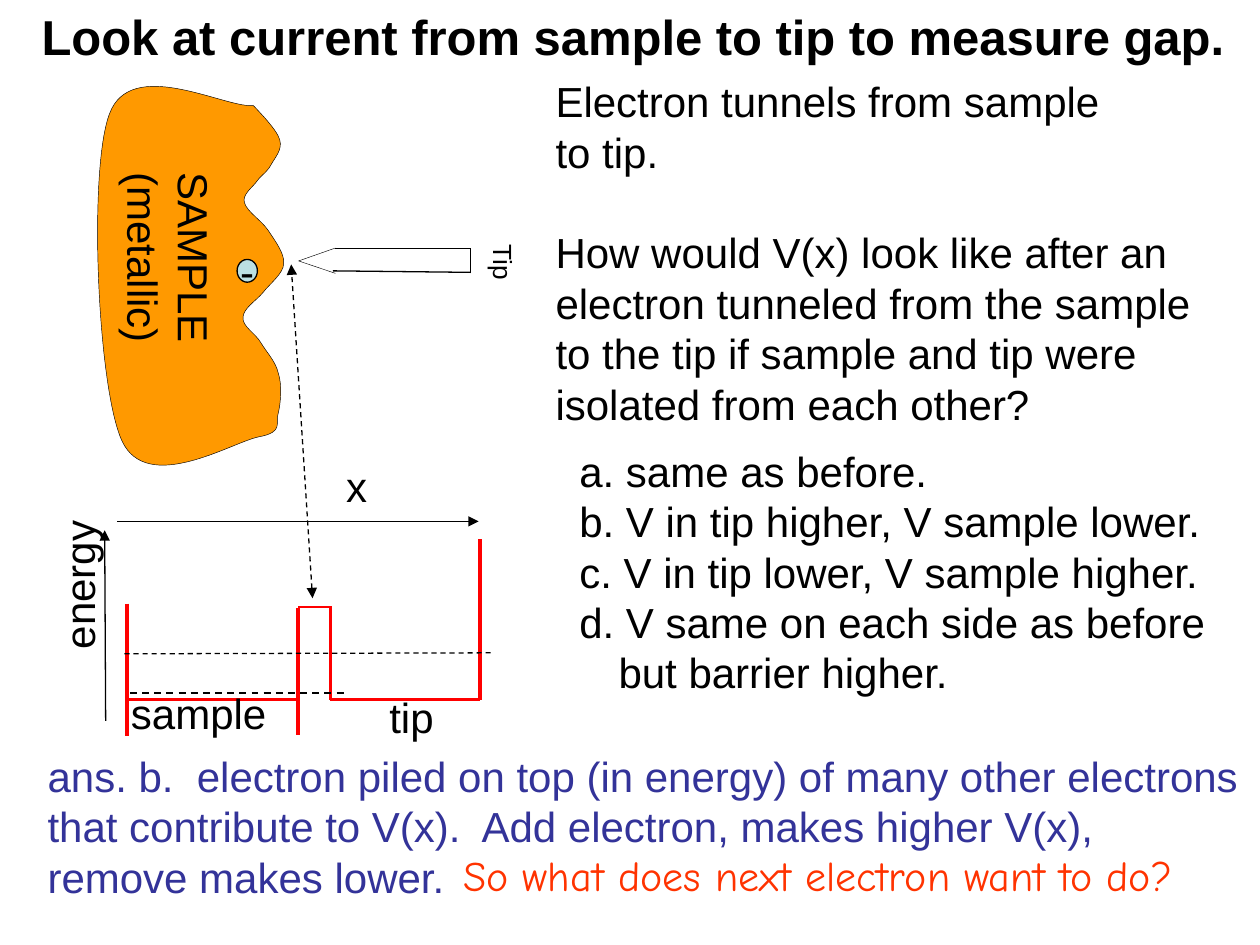
import itertools

import lxml.etree
import pptx
import pptx.dml.color
import pptx.enum.dml
import pptx.enum.shapes
import pptx.enum.text
import pptx.oxml.ns
import pptx.util

Cm, Pt = pptx.util.Cm, pptx.util.Pt
RGBColor = pptx.dml.color.RGBColor
qn = pptx.oxml.ns.qn

BLACK = RGBColor(0x00, 0x00, 0x00)
RED = RGBColor(0xFF, 0x00, 0x00)
METAL = RGBColor(0xFF, 0x99, 0x00)
ELECTRON = RGBColor(0xBB, 0xE0, 0xE3)
INDIGO = RGBColor(0x33, 0x33, 0x99)
ORANGE_RED = RGBColor(0xFF, 0x33, 0x00)

# Sample surface: a start point, then cubic segments of two controls and an end
SAMPLE_START = (3.31, 0.63)
SAMPLE_CURVES = [
    [(3.41, 0.74), (3.79, 1.12), (3.84, 1.32)],
    [(3.9, 1.52), (3.74, 1.68), (3.66, 1.83)],
    [(3.58, 1.98), (3.43, 2.06), (3.36, 2.18)],
    [(3.25, 2.31), (3.08, 2.44), (3.13, 2.59)],
    [(3.18, 2.77), (3.48, 2.95), (3.61, 3.15)],
    [(3.74, 3.35), (3.94, 3.61), (3.92, 3.81)],
    [(3.92, 4.01), (3.64, 4.22), (3.51, 4.39)],
    [(3.36, 4.57), (3.1, 4.72), (3.1, 4.9)],
    [(3.08, 5.08), (3.36, 5.23), (3.46, 5.41)],
    [(3.58, 5.61), (3.76, 5.79), (3.81, 6.02)],
    [(3.89, 6.25), (3.86, 6.63), (3.81, 6.83)],
    [(3.74, 7.03), (3.94, 7.21), (3.41, 7.31)],
    [(2.87, 7.42), (1.17, 8.48), (0.66, 7.39)],
    [(0.16, 6.3), (-0.02, 1.9), (0.41, 0.79)],
    [(0.84, -0.36), (2.7, 0.66), (3.28, 0.63)],
]


def add_line(slide, origin, start, end, color=BLACK, width=0.75,
             dashed=False, arrows=()):
    left, top = origin
    connector = slide.shapes.add_connector(
        pptx.enum.shapes.MSO_CONNECTOR.STRAIGHT,
        Cm(left + start[0]), Cm(top + start[1]),
        Cm(left + end[0]), Cm(top + end[1]))
    connector.line.color.rgb = color
    connector.line.width = Pt(width)
    if dashed:
        connector.line.dash_style = pptx.enum.dml.MSO_LINE.DASH
    properties = connector.element.spPr
    for arrow in arrows:
        lxml.etree.SubElement(properties.find(qn("a:ln")), qn(f"a:{arrow}"), type="triangle")
    lxml.etree.SubElement(properties, qn("a:effectLst"))


def style_text(frame, size=24, color=BLACK, font="Arial", bold=False):
    for paragraph in frame.paragraphs:
        for run in paragraph.runs:
            run.font.name = font
            run.font.size = Pt(size)
            run.font.bold = bold
            run.font.color.rgb = color


def add_text(slide, origin, box, text, rotation=0, inset=True, wrap=False, **style):
    left, top, width, height = box
    label = slide.shapes.add_textbox(
        Cm(origin[0] + left), Cm(origin[1] + top), Cm(width), Cm(height))
    label.rotation = rotation
    frame = label.text_frame
    frame.word_wrap = wrap
    frame.auto_size = pptx.enum.text.MSO_AUTO_SIZE.SHAPE_TO_FIT_TEXT
    if not inset:
        frame.margin_left = frame.margin_right = 0
        frame.margin_top = frame.margin_bottom = 0
    frame.text = text
    style_text(frame, **style)
    return frame


def style_shape(shape, fill, width):
    shape.shadow.inherit = False
    shape.fill.solid()
    shape.fill.fore_color.rgb = fill
    shape.line.color.rgb = BLACK
    shape.line.width = Pt(width)


def add_curved_outline(slide, origin, start, curves):
    left, top = origin
    outline = slide.shapes.build_freeform(Cm(left + start[0]), Cm(top + start[1]))
    outline.add_line_segments(
        [(Cm(left + x), Cm(top + y)) for x, y in itertools.chain.from_iterable(curves)])
    shape = outline.convert_to_shape()
    # Gather each three straight steps into one cubic curve
    steps = list(shape.element.iter(qn("a:lnTo")))
    for first, second, end in zip(steps[::3], steps[1::3], steps[2::3]):
        curve = lxml.etree.Element(qn("a:cubicBezTo"))
        first.addprevious(curve)
        for step in (first, second, end):
            curve.append(step[0])
            step.getparent().remove(step)
    return shape


def draw_microscope(slide, origin):
    left, top = origin
    # Tip
    tip_corners = [(7.67, 4.01), (7.67, 3.5), (4.96, 3.5), (4.22, 3.76), (4.96, 4.01)]
    for start, end in itertools.pairwise(tip_corners):
        add_line(slide, origin, start, end, width=0.25)
    add_line(slide, origin, (7.67, 3.99), (4.91, 3.96))
    add_text(slide, origin, (7.98, 3.48, 0.74, 0.64), "Tip", 90, inset=False, size=15)

    # Metallic sample
    sample = add_curved_outline(slide, origin, SAMPLE_START, SAMPLE_CURVES)
    style_shape(sample, METAL, 0.25)
    add_text(slide, origin, (-0.14, 2.69, 3.48, 2.06), "SAMPLE\n(metallic)", 90, inset=False)

    # Electron
    electron = slide.shapes.add_shape(
        pptx.enum.shapes.MSO_SHAPE.OVAL, Cm(left + 2.98), Cm(top + 3.73), Cm(0.41), Cm(0.46))
    style_shape(electron, ELECTRON, 0.75)
    frame = electron.text_frame
    frame.word_wrap = False
    frame.vertical_anchor = pptx.enum.text.MSO_ANCHOR.MIDDLE
    frame.text = "-"
    frame.paragraphs[0].alignment = pptx.enum.text.PP_ALIGN.CENTER
    style_text(frame)


def draw_potential(slide, origin):
    sample_left, gap_left, gap_right, tip_right = 0.56, 4.01, 4.66, 7.68
    floor, barrier = 5.1, 3.24

    # Axes
    add_line(slide, origin, (0.13, 5.53), (0.11, 1.69), arrows=["tailEnd"])
    add_text(slide, origin, (-1.97, 2.15, 3.1, 1.27), "energy", 270)
    add_line(slide, origin, (0.36, 1.51), (7.65, 1.51), arrows=["tailEnd"])
    add_text(slide, origin, (4.73, 0.16, 0.94, 1.27), "x")

    # Wells and barrier
    for start, end, level in [(sample_left, gap_left, floor),
                              (gap_left, gap_right, barrier),
                              (gap_right, tip_right, floor)]:
        add_line(slide, origin, (start, level), (end, level), RED, 1.5)
    for x, top, bottom, width in [(sample_left, 3.17, 5.83, 2.25),
                                  (gap_left, 3.26, 5.81, 2.25),
                                  (gap_right, 3.22, 5.12, 1.5),
                                  (tip_right, 1.87, 5.12, 2.25)]:
        add_line(slide, origin, (x, top), (x, bottom), RED, width)

    # Energy levels
    add_line(slide, origin, (0.51, 4.18), (7.93, 4.16), dashed=True)
    add_line(slide, origin, (0.62, 4.97), (4.99, 4.97), width=1, dashed=True)

    add_text(slide, origin, (0.39, 4.74, 3.5, 1.3), "sample")
    add_text(slide, origin, (5.85, 4.95, 0.91, 1.02), "tip", inset=False)


def write_question(slide, origin):
    prompts = [
        "Electron tunnels from sample",
        "to tip.",
        "How would V(x) look like after an electron tunneled from the sample "
        "to the tip if sample and tip were isolated from each other?",
    ]
    options = [
        "a. same as before.",
        "b. V in tip higher, V sample lower.",
        "c. V in tip lower, V sample higher.",
        "d. V same on each side as before but barrier higher.",
    ]
    frame = add_text(slide, origin, (0, 0, 13.77, 12.9), "\n".join(prompts + options), wrap=True)
    frame.paragraphs[2].space_before = Pt(28.8)
    choices = frame.paragraphs[len(prompts):]
    choices[0].space_before = Pt(9.6)
    for choice in choices:
        choice.level = 1
        indents = choice._p.get_or_add_pPr()
        indents.set("marL", str(Cm(1.27)))
        indents.set("indent", str(Cm(-0.79)))


def write_answer(slide, origin):
    add_text(slide, origin, (0, 0, 24.76, 3.33),
             "ans. b.  electron piled on top (in energy) of many other electrons\n"
             "that contribute to V(x).  Add electron, makes higher V(x),\n"
             "remove makes lower.", color=INDIGO)
    add_text(slide, origin, (8.38, 2, 16.36, 1.3), "So what does next electron want to do?",
             color=ORANGE_RED, font="Comic Neue")


def main():
    deck = pptx.Presentation()
    deck.slide_width, deck.slide_height = Cm(25.4), Cm(19.05)
    slide = deck.slides.add_slide(deck.slide_layouts[6])

    add_text(slide, (0.59, 0), (0, 0, 24.64, 1.45),
             "Look at current from sample to tip to measure gap.", size=28, bold=True)
    draw_microscope(slide, (1.8, 1.5))
    draw_potential(slide, (2, 9))
    # Link between the physical gap and the barrier
    add_line(slide, (0, 0), (6.3, 12.06), (5.87, 5.33), dashed=True,
             arrows=["headEnd", "tailEnd"])
    write_question(slide, (10.95, 1.4))
    write_answer(slide, (0.71, 15))
    deck.save("out.pptx")


if __name__ == "__main__":
    main()
